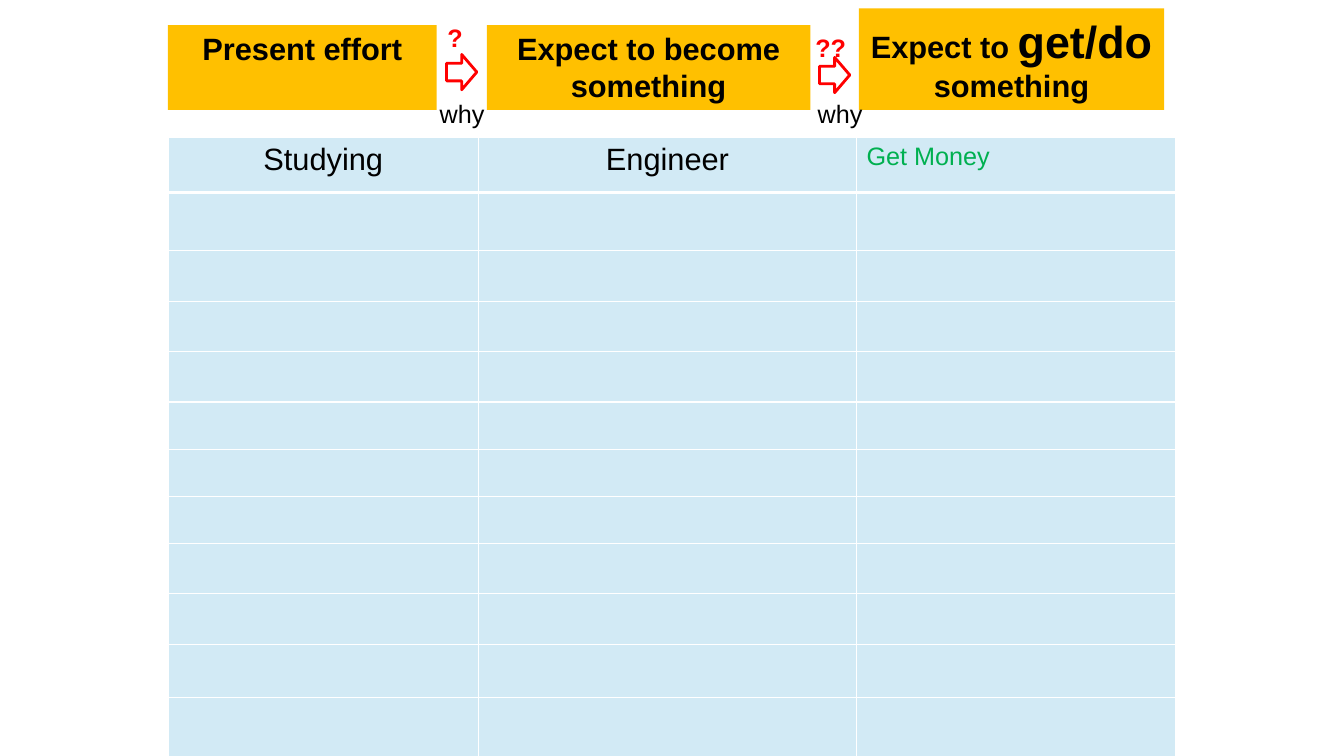
from dataclasses import dataclass

from lxml import etree
from pptx import Presentation
from pptx.dml.color import RGBColor
from pptx.enum.shapes import MSO_SHAPE
from pptx.enum.text import MSO_ANCHOR, PP_ALIGN
from pptx.oxml.ns import qn
from pptx.slide import Slide
from pptx.table import _Cell
from pptx.text.text import _Paragraph
from pptx.util import Pt

RECT, ARROW = MSO_SHAPE.RECTANGLE, MSO_SHAPE.RIGHT_ARROW
LEFT, CENTER = PP_ALIGN.LEFT, PP_ALIGN.CENTER
TOP = MSO_ANCHOR.TOP


@dataclass(frozen=True)
class Theme:
    font: str = "Arial"
    gold: str = "FFC000"
    red: str = "FF0000"
    black: str = "000000"
    green: str = "00B050"
    pale: str = "D2EAF5"
    white: str = "FFFFFF"
    small: float = 18
    head: float = 22
    large: float = 32


THEME = Theme()


@dataclass(frozen=True)
class Phrase:
    text: str
    size: float = THEME.head


@dataclass(frozen=True)
class Box:
    left: float
    top: float
    width: float
    title: tuple[Phrase, ...]


@dataclass(frozen=True)
class Label:
    text: str
    left: float
    top: float
    width: float
    color: str = THEME.black
    bold: bool = False
    align: PP_ALIGN = CENTER
    wrap: bool = True


@dataclass(frozen=True)
class Entry:
    text: str
    size: float = THEME.head
    color: str = THEME.black
    align: PP_ALIGN = CENTER


BASE = 78.5  # shared bottom edge of the gold boxes
BOXES = (
    Box(120, 18, 192, (Phrase("Present effort"),)),
    Box(347.8, 18, 231, (Phrase("Expect to become something"),)),
    Box(613.5, 6, 218, (Phrase("Expect to "), Phrase("get/do ", THEME.large),
                        Phrase("something"))),
)
ARROWS = ((319, 38.9), (585.4, 41))
LABELS = (
    Label("?", 312.5, 12.2, 26, THEME.red, True, LEFT, False),
    Label("??", 575.3, 19.4, 36.7, THEME.red, True, LEFT, False),
    Label("why", 306, 67, 48.2),
    Label("why", 576, 67, 48.2),
)
COLS = (221.8, 270, 228.2)
ROWS = (39.6, 41.6, 36, 36, 36, 33.7, 33.7, 33.7, 36, 36, 38.2, 50.2)
ENTRIES = (
    Entry("Studying"),
    Entry("Engineer"),
    Entry("Get Money", THEME.small, THEME.green, LEFT),
)


def style(para: _Paragraph, size: float, color: str, align: PP_ALIGN,
          bold: bool = False) -> None:
    para.alignment = align
    for run in para.runs:
        run.font.name = THEME.font
        run.font.size = Pt(size)
        run.font.bold = bold
        run.font.color.rgb = RGBColor.from_string(color)


def draw_box(slide: Slide, box: Box) -> None:
    shape = slide.shapes.add_shape(RECT, Pt(box.left), Pt(box.top),
                                   Pt(box.width), Pt(BASE - box.top))
    shape.shadow.inherit = False
    shape.fill.solid()
    shape.fill.fore_color.rgb = RGBColor.from_string(THEME.gold)
    shape.line.fill.background()
    frame = shape.text_frame
    frame.word_wrap = True
    frame.vertical_anchor = TOP
    para = frame.paragraphs[0]
    for phrase in box.title:
        para.add_run().text = phrase.text
    style(para, THEME.head, THEME.black, CENTER, True)
    for run, phrase in zip(para.runs, box.title):
        run.font.size = Pt(phrase.size)


def draw_arrow(slide: Slide, left: float, top: float) -> None:
    shape = slide.shapes.add_shape(ARROW, Pt(left), Pt(top), Pt(21.6), Pt(25.2))
    shape.shadow.inherit = False
    shape.fill.background()
    shape.line.color.rgb = RGBColor.from_string(THEME.red)
    shape.line.width = Pt(2)


def draw_label(slide: Slide, label: Label) -> None:
    shape = slide.shapes.add_textbox(Pt(label.left), Pt(label.top),
                                     Pt(label.width), Pt(29))
    frame = shape.text_frame
    frame.word_wrap = label.wrap
    frame.text = label.text
    style(frame.paragraphs[0], THEME.small, label.color, label.align, label.bold)


def edge(cell: _Cell, top: float, bottom: float) -> None:
    """Give the cell white borders, with the given top and bottom widths."""
    props = cell._tc.get_or_add_tcPr()
    for tag, width in (("lnL", 1), ("lnR", 1), ("lnT", top), ("lnB", bottom)):
        line = etree.SubElement(props, qn(f"a:{tag}"), w=str(Pt(width)))
        fill = etree.SubElement(line, qn("a:solidFill"))
        etree.SubElement(fill, qn("a:srgbClr"), val=THEME.white)


def draw_table(slide: Slide) -> None:
    table = slide.shapes.add_table(len(ROWS), len(COLS), Pt(120), Pt(98),
                                   Pt(sum(COLS)), Pt(sum(ROWS))).table
    table.first_row = table.horz_banding = False
    for col, width in zip(table.columns, COLS):
        col.width = Pt(width)
    for i, (row, height) in enumerate(zip(table.rows, ROWS)):
        row.height = Pt(height)
        for cell in row.cells:
            edge(cell, 3 if i == 1 else 1, 3 if i == 0 else 1)
            cell.fill.solid()
            cell.fill.fore_color.rgb = RGBColor.from_string(THEME.pale)
    for cell, entry in zip(table.rows[0].cells, ENTRIES):
        cell.text_frame.text = entry.text
        style(cell.text_frame.paragraphs[0], entry.size, entry.color, entry.align)


def main() -> None:
    deck = Presentation()
    deck.slide_width, deck.slide_height = Pt(960), Pt(540)
    slide = deck.slides.add_slide(deck.slide_layouts[6])
    for box in BOXES:
        draw_box(slide, box)
    for left, top in ARROWS:
        draw_arrow(slide, left, top)
    draw_table(slide)
    for label in LABELS:
        draw_label(slide, label)
    deck.save("out.pptx")


if __name__ == "__main__":
    main()
